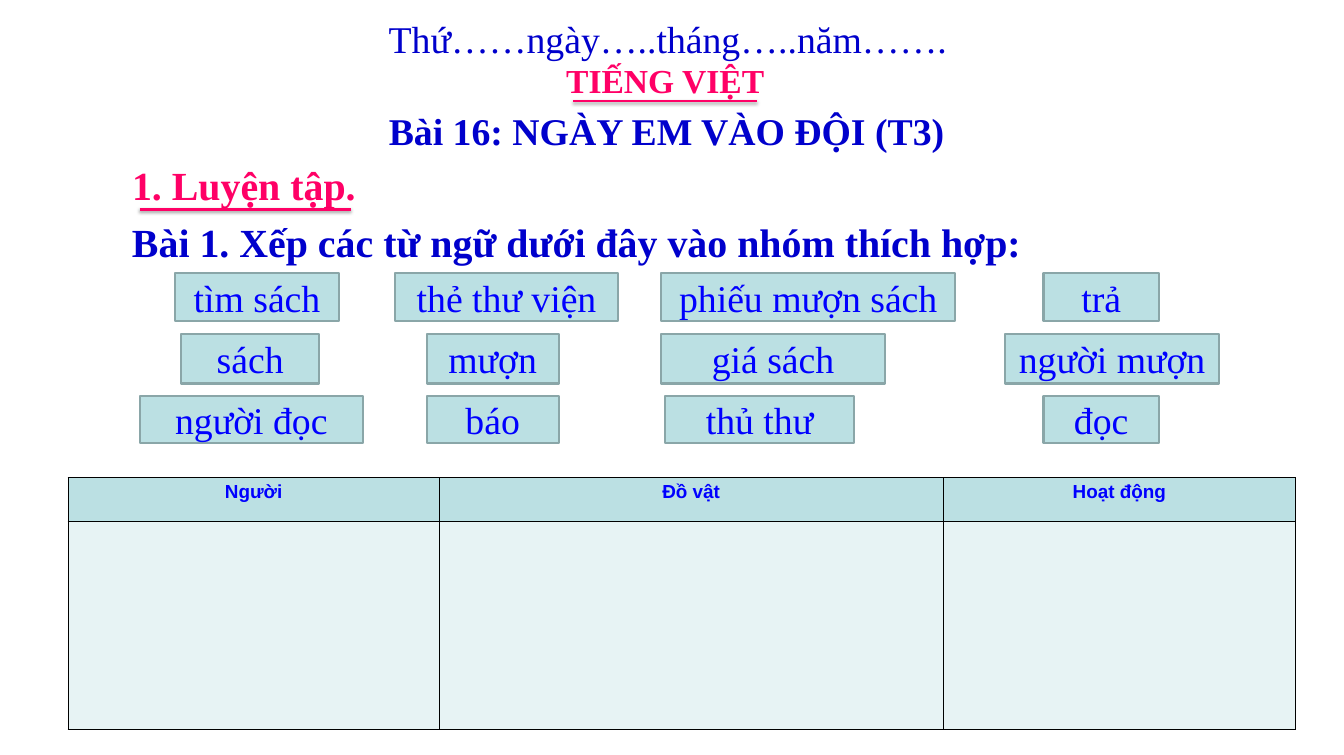
import pptx
import pptx.util
import pptx.dml.color
import pptx.enum.shapes
import pptx.enum.text
import pptx.oxml
import pptx.oxml.ns

Inches = pptx.util.Inches
ALIGN = pptx.enum.text.PP_ALIGN
ANCHOR = pptx.enum.text.MSO_ANCHOR
NS = pptx.oxml.ns.nsdecls("a")

SERIF = "Times New Roman"
NAVY, BLUE, PINK = "0000CC", "0000FF", "FF0066"
TEAL, PALE, EDGE = "BBE0E3", "E7F3F4", "8AA6A8"

ROWS = [
    (0, 0.63, [("tìm sách", 0.47, 2.17), ("thẻ thư viện", 3.38, 2.96),
               ("phiếu mượn sách", 6.91, 3.89), ("trả", 11.97, 1.53)]),
    (0.8, 0.66, [("sách", 0.55, 1.83), ("mượn", 3.8, 1.75),
                 ("giá sách", 6.91, 2.96), ("người mượn", 11.46, 2.84)]),
    (1.63, 0.62, [("người đọc", 0, 2.96), ("báo", 3.8, 1.75),
                  ("thủ thư", 6.96, 2.5), ("đọc", 11.97, 1.53)]),
]
HEADS = ["Người", "Đồ vật", "Hoạt động"]
WIDTHS = [4.92, 6.67, 4.67]
HEIGHTS = [0.58, 2.75]


def color(code):
    return pptx.dml.color.RGBColor.from_string(code)


def write(frame, text, size=36, hue=NAVY, bold=False, font=SERIF,
          align=ALIGN.LEFT, anchor=ANCHOR.TOP, wrap=True):
    frame.word_wrap = wrap
    frame.auto_size = pptx.enum.text.MSO_AUTO_SIZE.NONE
    frame.vertical_anchor = anchor
    para = frame.paragraphs[0]
    para.alignment = align
    run = para.add_run()
    run.text = text
    run.font.size = pptx.util.Pt(size)
    run.font.name = font
    run.font.bold = bold
    run.font.color.rgb = color(hue)


def place(shape, left, top, width, height):
    shape.left, shape.top = Inches(left), Inches(top)
    shape.width, shape.height = Inches(width), Inches(height)


def label(slide, box, text, **form):
    shape = slide.shapes.add_textbox(*map(Inches, box))
    write(shape.text_frame, text, **form)


def rule(slide, left, top, width, weight, alpha):
    line = slide.shapes.add_connector(
        pptx.enum.shapes.MSO_CONNECTOR.STRAIGHT,
        Inches(left), Inches(top), Inches(left + width), Inches(top))
    line.line.color.rgb = color(PINK)
    line.line.width = pptx.util.Pt(weight)
    line._element.spPr.append(pptx.oxml.parse_xml(
        f'<a:effectLst {NS}><a:outerShdw blurRad="39370" dist="21600" '
        f'dir="5400000" rotWithShape="0"><a:srgbClr val="000000">'
        f'<a:alpha val="{alpha * 1000}"/></a:srgbClr></a:outerShdw></a:effectLst>'))


def header(slide, left, top):
    label(slide, (left + 0.04, top, 7.67, 0.71),
          "Thứ……ngày…..tháng…..năm…….", wrap=False)
    label(slide, (left + 2.39, top + 0.59, 2.85, 0.64), "TIẾNG VIỆT",
          size=32, hue=PINK, bold=True, wrap=False)
    rule(slide, left + 2.58, top + 1.18, 2.44, 2, 38)
    title = slide.shapes.title
    place(title, left, top + 1.22, 7.64, 0.71)
    write(title.text_frame, "Bài 16: NGÀY EM VÀO ĐỘI (T3)",
          bold=True, align=ALIGN.CENTER, wrap=False)


def task(slide, left, top):
    label(slide, (left, top, 4.58, 0.74), "1. Luyện tập.",
          size=38, hue=PINK, bold=True)
    rule(slide, left + 0.2, top + 0.69, 2.8, 3, 35)
    label(slide, (left, top + 0.75, 15.27, 0.74),
          "Bài 1. Xếp các từ ngữ dưới đây vào nhóm thích hợp:",
          size=38, bold=True, align=ALIGN.JUSTIFY)


def words(slide, left, top):
    for down, height, row in ROWS:
        for text, right, width in row:
            card = slide.shapes.add_shape(
                pptx.enum.shapes.MSO_SHAPE.RECTANGLE, Inches(left + right),
                Inches(top + down), Inches(width), Inches(height))
            card.shadow.inherit = False
            card.fill.solid()
            card.fill.fore_color.rgb = color(TEAL)
            card.line.color.rgb = color(EDGE)
            card.line.width = pptx.util.Pt(2)
            write(card.text_frame, text, hue=BLUE,
                  align=ALIGN.CENTER, anchor=ANCHOR.MIDDLE)


def border(cell):
    props = cell._tc.get_or_add_tcPr()
    for spot, side in enumerate(("lnL", "lnR", "lnT", "lnB")):
        props.insert(spot, pptx.oxml.parse_xml(
            f'<a:{side} {NS} w="12700"><a:solidFill>'
            f'<a:srgbClr val="000000"/></a:solidFill></a:{side}>'))


def groups(slide, left, top):
    table = slide.shapes.add_table(
        len(HEIGHTS), len(WIDTHS), Inches(left), Inches(top),
        Inches(sum(WIDTHS)), Inches(sum(HEIGHTS))).table
    for col, width in zip(table.columns, WIDTHS):
        col.width = Inches(width)
    for row, height, fill in zip(table.rows, HEIGHTS, (TEAL, PALE)):
        row.height = Inches(height)
        for cell in row.cells:
            cell.fill.solid()
            cell.fill.fore_color.rgb = color(fill)
            border(cell)
    for cell, text in zip(table.rows[0].cells, HEADS):
        write(cell.text_frame, text, size=18, hue=BLUE, bold=True,
              font="Arial", align=ALIGN.CENTER)


def main():
    deck = pptx.Presentation()
    deck.slide_width, deck.slide_height = Inches(17.8), Inches(10)
    slide = deck.slides.add_slide(deck.slide_layouts[5])
    groups(slide, 0.9, 6.33)
    header(slide, 5.01, 0.16)
    task(slide, 1.65, 2.08)
    words(slide, 1.85, 3.62)
    deck.save("out.pptx")


if __name__ == "__main__":
    main()
